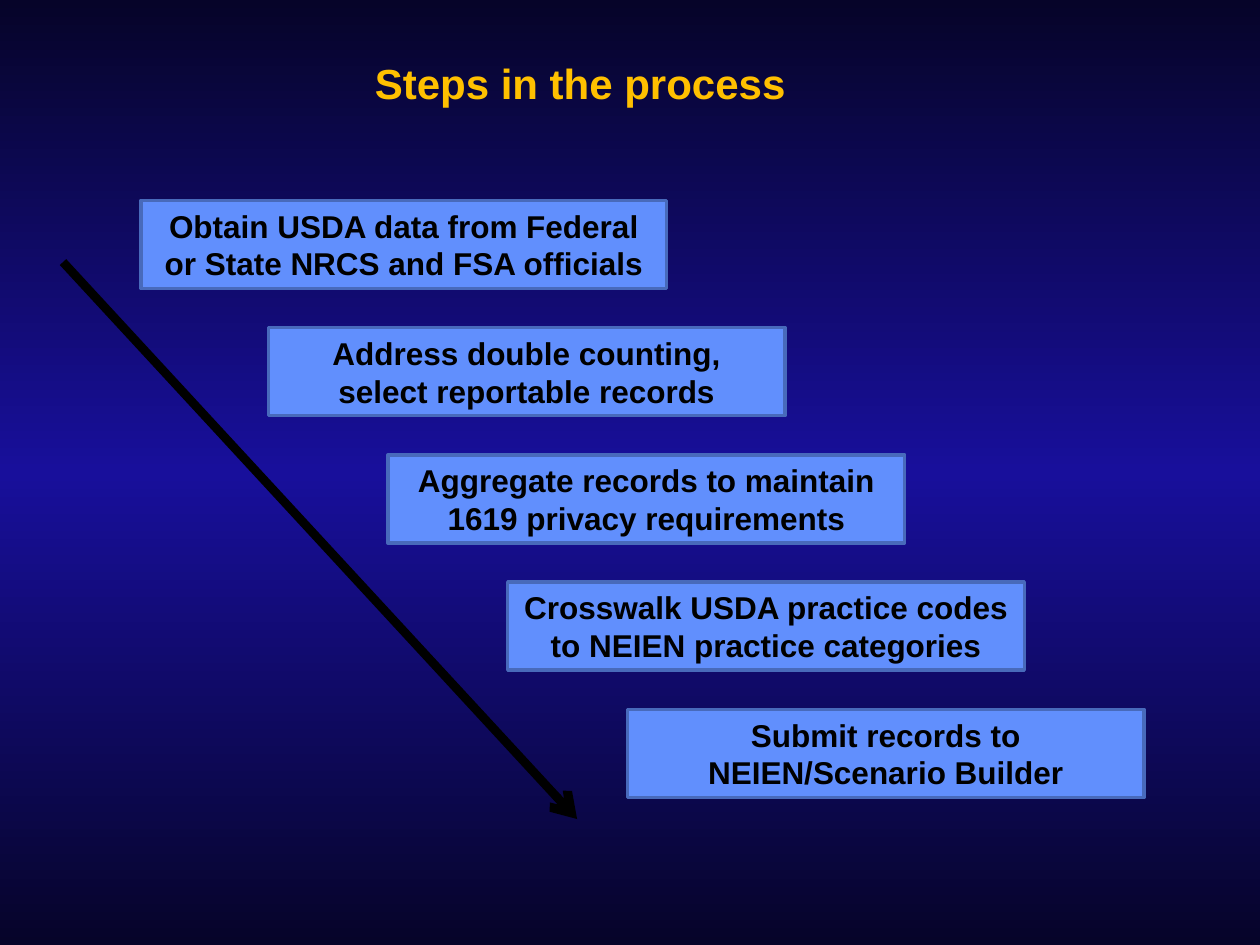
import copy
import dataclasses

import pptx
import pptx.dml.color
import pptx.enum.shapes
import pptx.enum.text
import pptx.oxml
import pptx.oxml.ns
import pptx.util

Inches = pptx.util.Inches


@dataclasses.dataclass(frozen=True)
class Theme:
    font: str = "Arial"
    title_size: int = 24
    step_size: int = 18
    title: str = "FFC000"
    text: str = "000000"
    step_fill: str = "618FFD"
    step_line: str = "486ABB"
    arrow: str = "000000"
    background: tuple = ("060429", "180F9B", "060429")


THEME = Theme()

STEPS = [
    ["Obtain USDA data from Federal or State NRCS and FSA officials"],
    ["Address double counting,", "select reportable records"],
    ["Aggregate records to maintain 1619 privacy requirements"],
    ["Crosswalk USDA practice codes to NEIEN practice categories"],
    ["Submit records to NEIEN/Scenario Builder"],
]


def rgb(value):
    return pptx.dml.color.RGBColor.from_string(value)


def add_centred_run(paragraph, text, size, color):
    paragraph.alignment = pptx.enum.text.PP_ALIGN.CENTER
    run = paragraph.add_run()
    run.text = text
    run.font.name = THEME.font
    run.font.size = pptx.util.Pt(size)
    run.font.bold = True
    run.font.color.rgb = rgb(color)


def paint_background(slide):
    fill = slide.background.fill
    fill.gradient()
    fill.gradient_angle = 270
    stop_list = slide._element.find(".//" + pptx.oxml.ns.qn("a:gsLst"))
    stop_list.append(copy.deepcopy(stop_list[0]))
    last = len(THEME.background) - 1
    for index, color in enumerate(THEME.background):
        stop = fill.gradient_stops[index]
        stop.position = index / last
        stop.color.rgb = rgb(color)


def set_title(slide, text):
    title = slide.shapes.title
    title.left, title.top = Inches(2.86), Inches(0)
    title.width, title.height = Inches(3.49), Inches(0.91)
    frame = title.text_frame
    frame.word_wrap = False
    frame.auto_size = pptx.enum.text.MSO_AUTO_SIZE.NONE
    frame.vertical_anchor = pptx.enum.text.MSO_ANCHOR.BOTTOM
    add_centred_run(frame.paragraphs[0], text, THEME.title_size, THEME.title)


def add_step(slide, left, top, width, lines):
    shape = slide.shapes.add_shape(
        pptx.enum.shapes.MSO_SHAPE.RECTANGLE,
        Inches(left), Inches(top), Inches(width), Inches(0.7),
    )
    shape.shadow.inherit = False
    shape.fill.solid()
    shape.fill.fore_color.rgb = rgb(THEME.step_fill)
    shape.line.color.rgb = rgb(THEME.step_line)
    shape.line.width = pptx.util.Pt(2)
    frame = shape.text_frame
    frame.word_wrap = True
    frame.vertical_anchor = pptx.enum.text.MSO_ANCHOR.MIDDLE
    for index, line in enumerate(lines):
        paragraph = frame.add_paragraph() if index else frame.paragraphs[0]
        add_centred_run(paragraph, line, THEME.step_size, THEME.text)


def add_arrow(slide, start, end):
    arrow = slide.shapes.add_connector(
        pptx.enum.shapes.MSO_CONNECTOR.STRAIGHT,
        *(Inches(value) for value in start + end),
    )
    arrow.line.color.rgb = rgb(THEME.arrow)
    arrow.line.width = pptx.util.Pt(5)
    head = pptx.oxml.parse_xml(
        f'<a:tailEnd {pptx.oxml.ns.nsdecls("a")} type="arrow"/>'
    )
    arrow.line._get_or_add_ln().append(head)
    no_effects = pptx.oxml.parse_xml(
        f'<a:effectLst {pptx.oxml.ns.nsdecls("a")}/>'
    )
    arrow._element.spPr.append(no_effects)


def main():
    presentation = pptx.Presentation()
    presentation.slide_width = Inches(10)
    presentation.slide_height = Inches(7.5)
    slide = presentation.slides.add_slide(presentation.slide_layouts[5])
    paint_background(slide)
    set_title(slide, "Steps in the process")
    for index, lines in enumerate(STEPS):
        left = 1.18 + 0.95 * index if index else 1.12
        width = 4.1 if index else 4.17
        add_step(slide, left, 1.59 + 1.01 * index, width, lines)
    add_arrow(slide, (0.5, 2.08), (4.58, 6.5))
    presentation.save("out.pptx")


if __name__ == "__main__":
    main()
